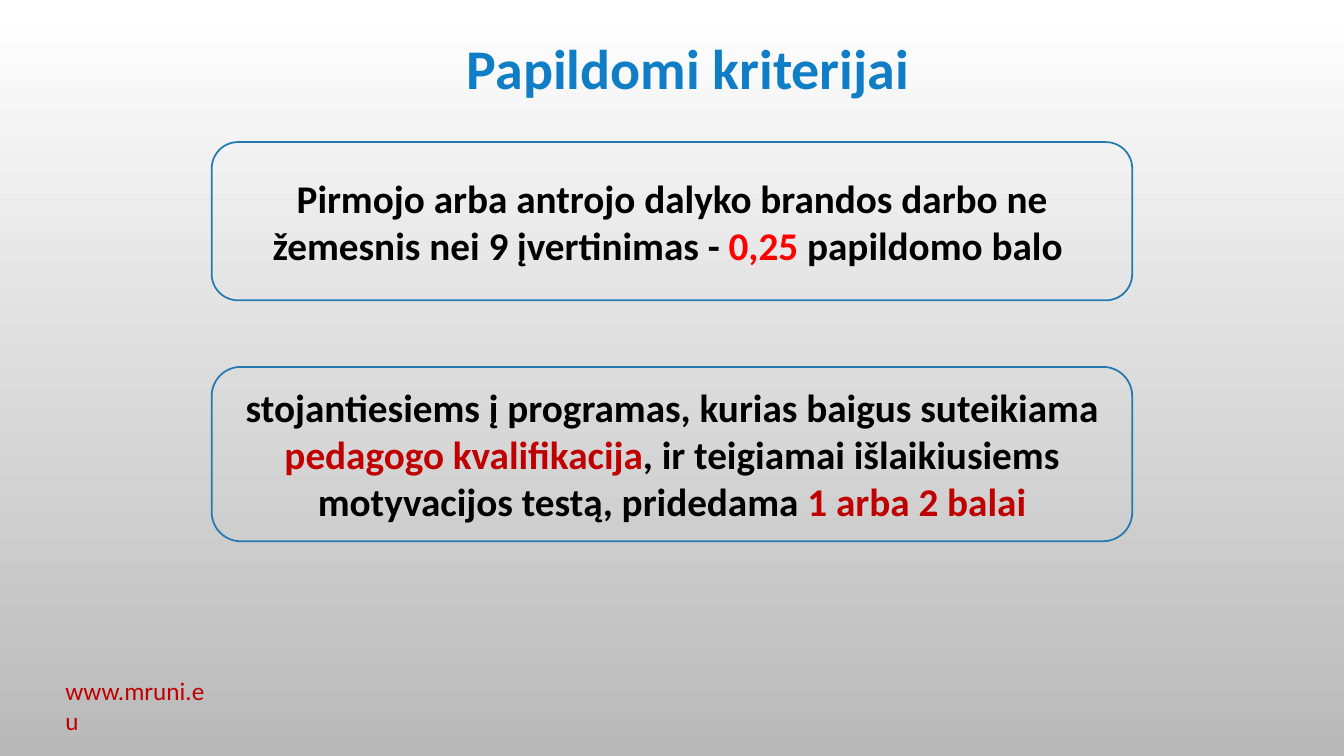
from pptx import Presentation
from pptx.dml.color import RGBColor
from pptx.enum.shapes import MSO_SHAPE as Shape
from pptx.enum.text import MSO_ANCHOR as Anchor, MSO_AUTO_SIZE as AutoSize, PP_ALIGN as Align
from pptx.util import Inches, Pt

COLORS = {
    "top": "FFFFFF",
    "bottom": "B9B9B9",
    "title": "107EC6",
    "border": "2379B0",
    "text": "000000",
    "red": "FF0000",
    "dark_red": "C00000",
}
FONT = "Calibri"

CRITERIA = [
    (1.41, 1.57, [
        ("Pirmojo arba antrojo dalyko brandos darbo ne žemesnis nei 9 įvertinimas - ", "text"),
        ("0,25", "red"),
        (" papildomo balo ", "text"),
    ]),
    (3.64, 1.73, [
        ("stojantiesiems į programas, kurias baigus suteikiama ", "text"),
        ("pedagogo kvalifikacija", "dark_red"),
        (", ir teigiamai išlaikiusiems motyvacijos testą, pridedama ", "text"),
        ("1 arba 2 balai", "dark_red"),
    ]),
]


def color(name):
    return RGBColor.from_string(COLORS[name])


def set_background(page):
    fill = page.background.fill
    fill.gradient()
    fill.gradient_angle = 270
    for stop, name in zip(fill.gradient_stops, ("top", "bottom")):
        stop.color.rgb = color(name)


def write_text(box, spans, size, bold, align, anchor):
    frame = box.text_frame
    frame.word_wrap = True
    frame.auto_size = AutoSize.NONE
    frame.vertical_anchor = anchor
    para = frame.paragraphs[0]
    para.alignment = align
    para.font.name = FONT
    para.font.size = Pt(size)
    para.font.bold = bold
    for text, name in spans:
        span = para.add_run()
        span.text = text
        span.font.color.rgb = color(name)


def add_title(page, text):
    title = page.shapes.title
    title.left, title.top = Inches(2.18), Inches(0.28)
    title.width, title.height = Inches(9.29), Inches(0.77)
    write_text(title, [(text, "title")], 40, True, Align.CENTER, Anchor.TOP)


def add_criterion(page, top, height, spans):
    box = page.shapes.add_shape(
        Shape.ROUNDED_RECTANGLE, Inches(2.1), Inches(top), Inches(9.13), Inches(height))
    box.shadow.inherit = False
    box.fill.background()
    box.line.color.rgb = color("border")
    box.line.width = Pt(1.25)
    write_text(box, spans, 28, True, Align.CENTER, Anchor.MIDDLE)


def add_address(page, text):
    box = page.shapes.add_textbox(Inches(0.55), Inches(6.65), Inches(1.58), Inches(0.4))
    write_text(box, [(text, "dark_red")], 18, False, Align.LEFT, Anchor.TOP)


def main():
    deck = Presentation()
    deck.slide_width, deck.slide_height = Inches(13.33), Inches(7.5)
    page = deck.slides.add_slide(deck.slide_layouts.get_by_name("Title Only"))
    set_background(page)
    add_title(page, "Papildomi kriterijai")
    for top, height, spans in CRITERIA:
        add_criterion(page, top, height, spans)
    add_address(page, "www.mruni.eu")
    deck.save("out.pptx")


if __name__ == "__main__":
    main()
